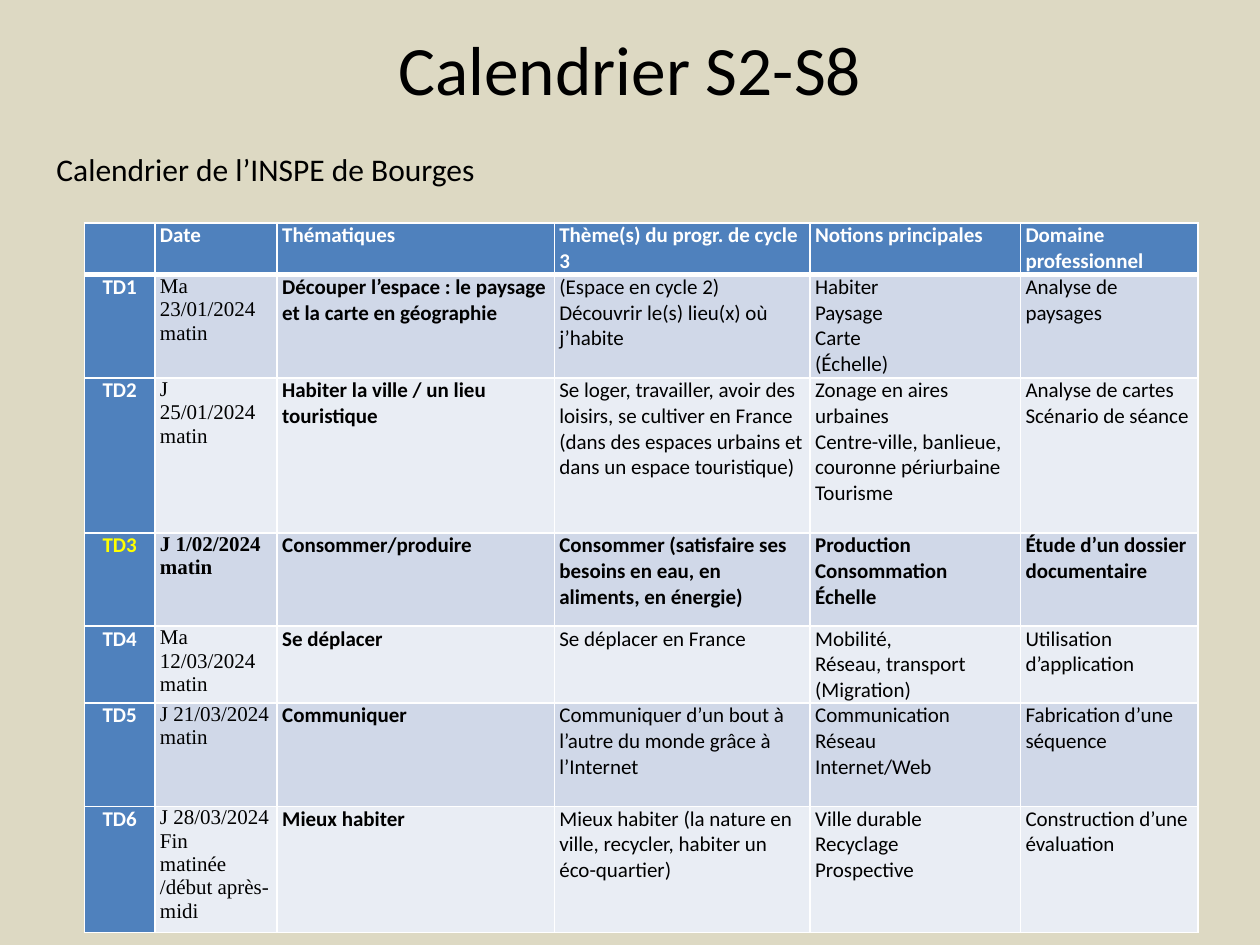
from dataclasses import dataclass

from lxml import etree
from pptx import Presentation
from pptx.dml.color import RGBColor
from pptx.enum import text
from pptx.oxml import ns
from pptx.util import Inches, Pt

BLUE, YELLOW, WHITE, BLACK = "4F81BD", "FFFF00", "FFFFFF", "000000"
BANDS = ("D0D8E8", "E9EDF4")
SANS, SERIF = "Calibri", "Times New Roman"
COLUMN_WIDTHS = (0.56, 0.97, 2.2, 2.03, 1.67, 1.41)
HEADER_HEIGHT = 0.41
HEADERS = ("", "Date", "Thématiques", "Thème(s) du progr. de cycle 3",
           "Notions principales", "Domaine professionnel")


@dataclass
class Session:
    height: float
    date: str
    topic: str
    theme: str
    notions: str
    skill: str
    highlighted: bool = False


@dataclass
class Style:
    color: str = BLACK
    size: float = 12
    font: str = SANS
    bold: bool = False
    align: text.PP_ALIGN = text.PP_ALIGN.LEFT


SESSIONS = (
    Session(0.82, "Ma 23/01/2024\nmatin",
            "Découper l’espace : le paysage et la carte en géographie",
            "(Espace en cycle 2)\nDécouvrir le(s) lieu(x) où j’habite",
            "Habiter\nPaysage\nCarte\n(Échelle)", "Analyse de paysages"),
    Session(1.23, "J\n25/01/2024\nmatin", "Habiter la ville / un lieu touristique",
            "Se loger, travailler, avoir des loisirs, se cultiver en France "
            "(dans des espaces urbains et dans un espace touristique)",
            "Zonage en aires urbaines\nCentre-ville, banlieue, couronne périurbaine\nTourisme",
            "Analyse de cartes\nScénario de séance"),
    Session(0.74, "J 1/02/2024\nmatin", "Consommer/produire",
            "Consommer (satisfaire ses besoins en eau, en aliments, en énergie)",
            "Production\nConsommation\nÉchelle", "Étude d’un dossier documentaire",
            highlighted=True),
    Session(0.61, "Ma 12/03/2024\nmatin", "Se déplacer", "Se déplacer en France",
            "Mobilité,\nRéseau, transport\n(Migration)", "Utilisation d’application"),
    Session(0.82, "J 21/03/2024\nmatin", "Communiquer",
            "Communiquer d’un bout à l’autre du monde grâce à l’Internet",
            "Communication\nRéseau\nInternet/Web", "Fabrication d’une séquence"),
    Session(0.82, "J 28/03/2024\nFin matinée /début après-midi", "Mieux habiter",
            "Mieux habiter (la nature en ville, recycler, habiter un éco-quartier)",
            "Ville durable\nRecyclage\nProspective", "Construction d’une évaluation"),
)


def rgb(color: str) -> RGBColor:
    return RGBColor.from_string(color)


def write(tf, content: str, style: Style) -> None:
    tf.text = content
    for p in tf.paragraphs:
        p.alignment = style.align
        p.font.name = style.font
        p.font.size = Pt(style.size)
        p.font.bold = style.bold
        p.font.color.rgb = rgb(style.color)


def add_label(s, left: float, top: float, width: float, height: float,
              content: str, style: Style):
    tf = s.shapes.add_textbox(*map(Inches, (left, top, width, height))).text_frame
    write(tf, content, style)
    return tf


def set_borders(cell, top: float = 1, bottom: float = 1) -> None:
    """Draw white borders, with widths in points; call before the fill is set."""
    tcPr = cell._tc.get_or_add_tcPr()
    for side, width in (("L", 1), ("R", 1), ("T", top), ("B", bottom)):
        ln = etree.SubElement(tcPr, ns.qn(f"a:ln{side}"), w=str(Pt(width)))
        fill = etree.SubElement(ln, ns.qn("a:solidFill"))
        etree.SubElement(fill, ns.qn("a:srgbClr"), val=WHITE)


def fill_cell(cell, content: str, fill: str, style: Style,
              top: float = 1, bottom: float = 1) -> None:
    set_borders(cell, top, bottom)
    cell.fill.solid()
    cell.fill.fore_color.rgb = rgb(fill)
    cell.margin_left = cell.margin_right = Inches(0.04)
    cell.margin_top = cell.margin_bottom = 0
    write(cell.text_frame, content, style)


def add_calendar(s) -> None:
    heights = (HEADER_HEIGHT, *(session.height for session in SESSIONS))
    table = s.shapes.add_table(
        len(heights), len(COLUMN_WIDTHS), Inches(0.67), Inches(1.77),
        Inches(sum(COLUMN_WIDTHS)), Inches(sum(heights))).table
    for column, width in zip(table.columns, COLUMN_WIDTHS):
        column.width = Inches(width)
    for row, height in zip(table.rows, heights):
        row.height = Inches(height)

    for col, header in enumerate(HEADERS):
        fill_cell(table.cell(0, col), header, BLUE, Style(WHITE, bold=True), bottom=3)

    for number, session in enumerate(SESSIONS, 1):
        strong = session.highlighted
        band = BANDS[(number - 1) % 2]
        body = Style(bold=strong)
        name_style = Style(YELLOW if strong else WHITE, bold=True,
                           align=text.PP_ALIGN.CENTER)
        cells = (
            (f"TD{number}", BLUE, name_style),
            (session.date, band, Style(font=SERIF, bold=strong)),
            (session.topic, band, Style(bold=True)),
            (session.theme, band, body),
            (session.notions, band, body),
            (session.skill, band, body),
        )
        for col, (content, fill, style) in enumerate(cells):
            fill_cell(table.cell(number, col), content, fill, style,
                      top=3 if number == 1 else 1)


def main() -> None:
    prs = Presentation()
    prs.slide_width, prs.slide_height = Inches(10), Inches(7.5)
    s = prs.slides.add_slide(prs.slide_layouts[6])
    s.background.fill.solid()
    s.background.fill.fore_color.rgb = rgb("DDD9C3")

    title = add_label(s, 0.5, 0.16, 9, 0.75, "Calendrier S2-S8",
                      Style(size=39.6, align=text.PP_ALIGN.CENTER))
    title.word_wrap = True
    title.vertical_anchor = text.MSO_ANCHOR.MIDDLE
    subtitle = add_label(s, 0.35, 1.14, 3.56, 0.4,
                         "Calendrier de l’INSPE de Bourges", Style(size=18))
    subtitle.word_wrap = False
    subtitle.auto_size = text.MSO_AUTO_SIZE.SHAPE_TO_FIT_TEXT

    add_calendar(s)
    prs.save("out.pptx")


if __name__ == "__main__":
    main()
